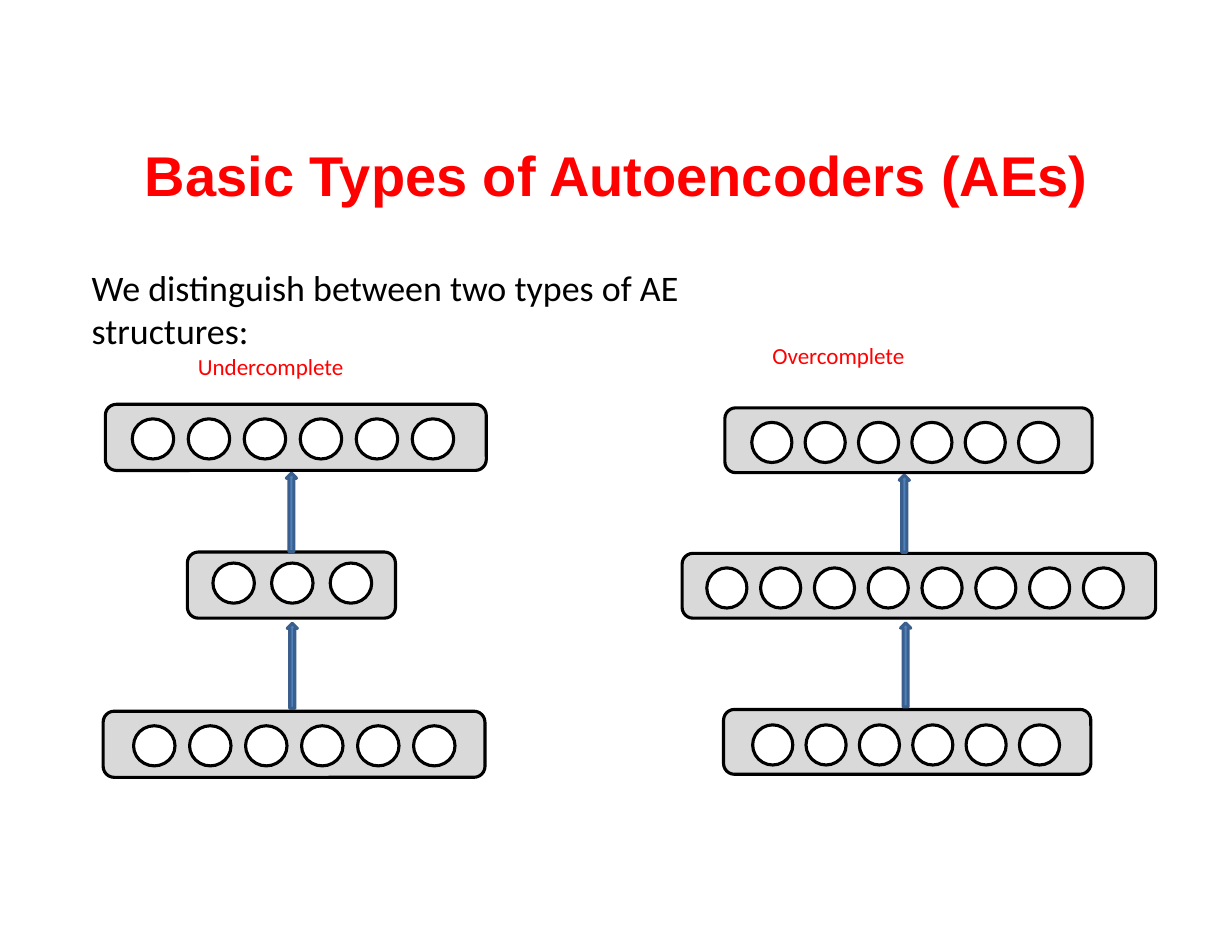
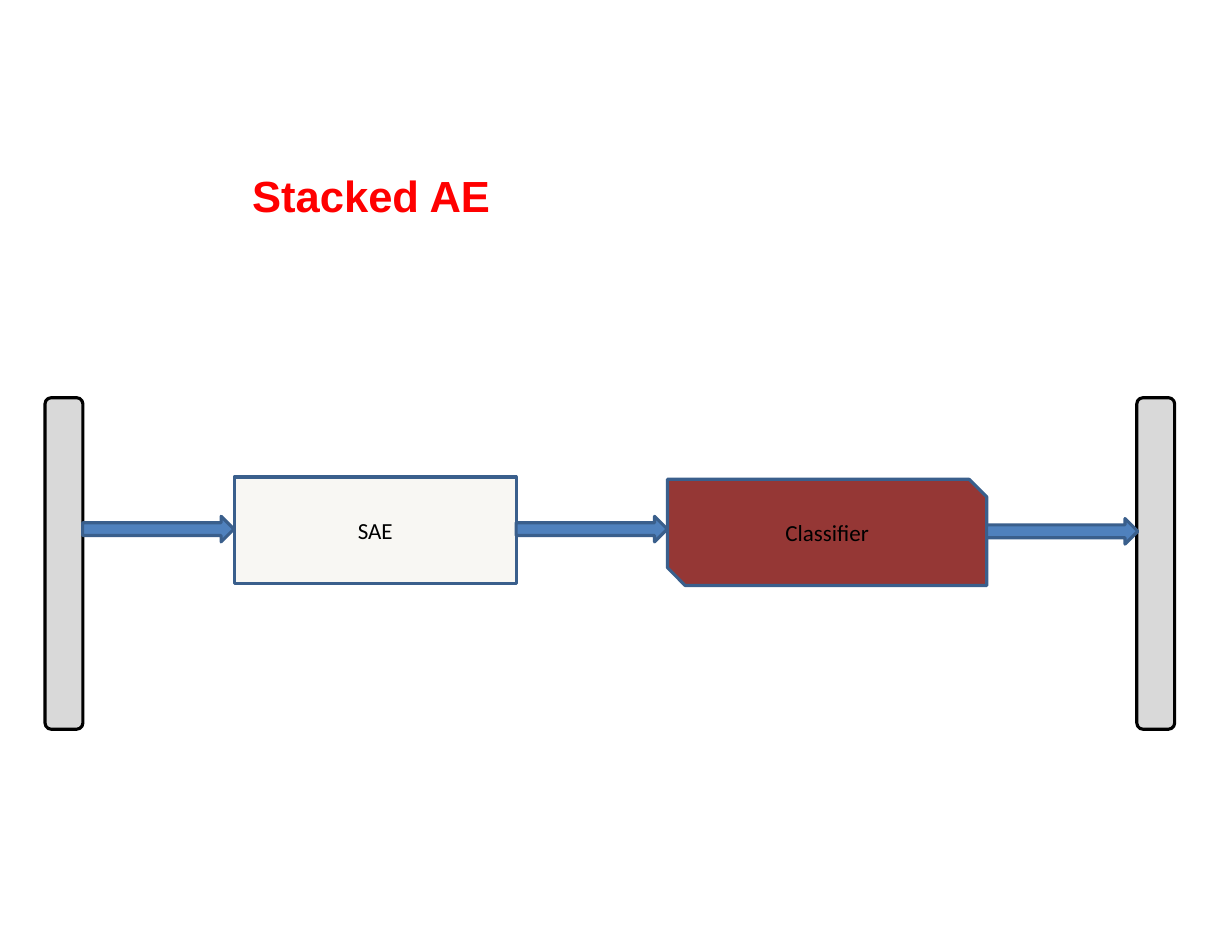
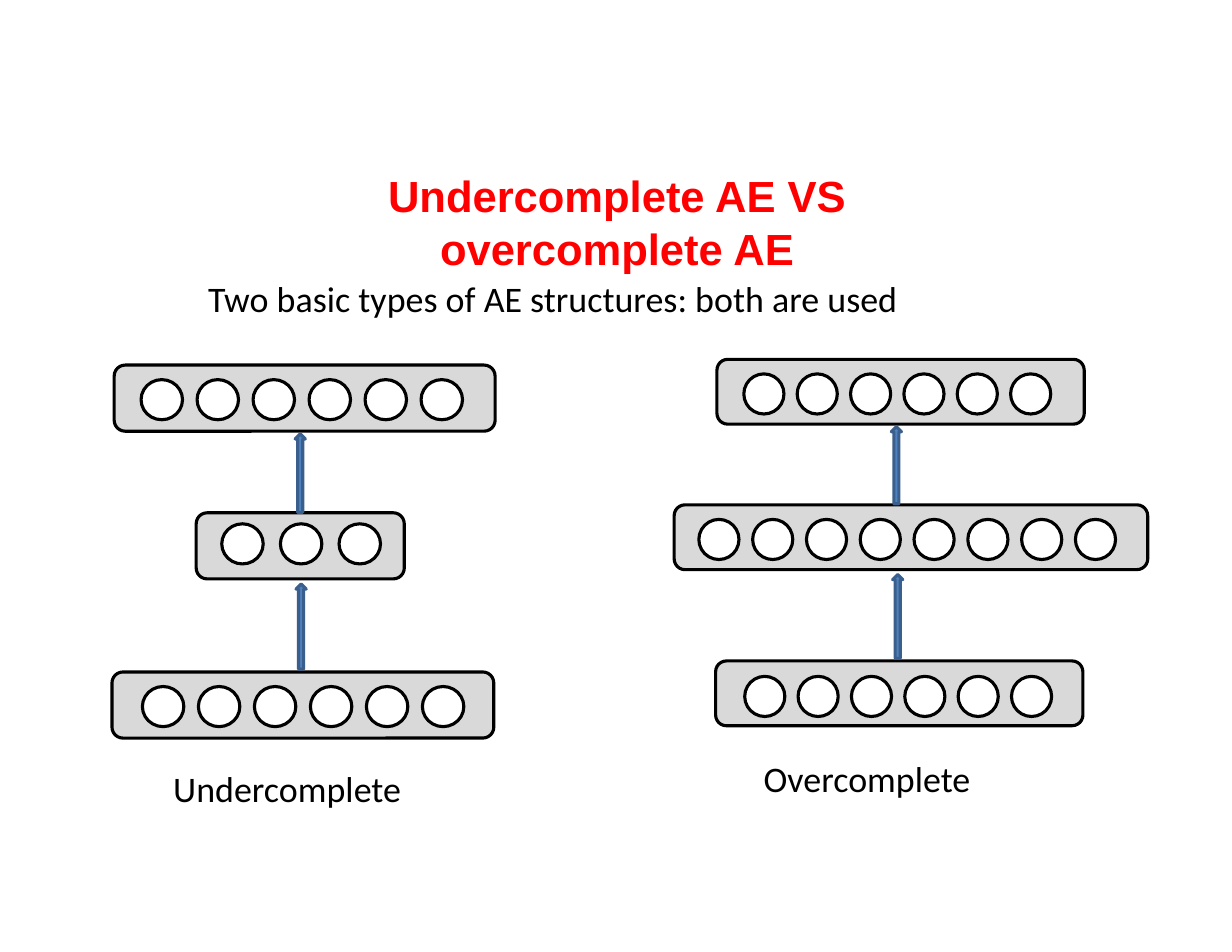
from pptx import Presentation
from pptx.dml.color import RGBColor
from pptx.enum.shapes import MSO_SHAPE as Shape
from pptx.enum.text import MSO_ANCHOR as Anchor, MSO_AUTO_SIZE as AutoSize, PP_ALIGN as Align
from pptx.util import Cm, Pt

COLORS = {
    "title": "FF0000",
    "text": "000000",
    "outline": "000000",
    "layer": "D9D9D9",
    "node": "FFFFFF",
    "arrow": "4F81BD",
    "arrow_line": "3A5F8C",
    "encoder": "F8F7F3",
    "classifier": "953735",
}
BODY, LABEL = 23.1, 14.8

# Lengths in cm, measured from the top left corner of each network.
# Layer: left, top, width, node count, first node offset, node pitch, node drop
# Arrow: centre x, centre y, length
UNDERCOMPLETE = {
    "height": 1.5,
    "node": (0.94, 0.91),
    "layers": [
        (0.05, 0, 8.64, 6, 0.61, 1.27, 0.33),
        (0, 6.96, 8.66, 6, 0.69, 1.27, 0.33),
        (1.91, 3.35, 4.72, 3, 0.58, 1.33, 0.25),
    ],
    "arrows": [(4.29, 5.93, 1.93), (4.27, 2.45, 1.78)],
}
OVERCOMPLETE = {
    "height": 1.47,
    "node": (0.91, 0.91),
    "layers": [
        (0.97, 0, 8.33, 6, 0.61, 1.21, 0.33),
        (0.94, 6.84, 8.33, 6, 0.66, 1.21, 0.35),
        (0, 3.3, 10.74, 8, 0.56, 1.22, 0.33),
    ],
    "arrows": [(5.07, 5.83, 1.9), (5.04, 2.4, 1.75)],
}


class SlideBuilder:
    """Holds the shared style and the slide being filled."""

    def __init__(self):
        self.deck = Presentation()
        self.deck.slide_width, self.deck.slide_height = Cm(27.94), Cm(21.59)
        self.page = None

    def set_text(self, frame, words, size, color="text", font="Calibri", bold=False,
                 align=Align.LEFT):
        para = frame.paragraphs[0]
        para.text = words
        para.alignment = align
        para.font.size, para.font.name, para.font.bold = Pt(size), font, bold
        para.font.color.rgb = RGBColor.from_string(COLORS[color])

    def new_page(self, title, left, top, width, height, size, align=Align.CENTER):
        self.page = self.deck.slides.add_slide(self.deck.slide_layouts[5])
        box = self.page.shapes.title
        box.left, box.top, box.width, box.height = Cm(left), Cm(top), Cm(width), Cm(height)
        frame = box.text_frame
        frame.margin_left = frame.margin_top = frame.margin_right = frame.margin_bottom = 0
        frame.vertical_anchor = Anchor.TOP
        frame.auto_size = AutoSize.SHAPE_TO_FIT_TEXT
        self.set_text(frame, title, size, "title", "Arial", True, align)

    def text(self, words, left, top, width, height, size=BODY, color="text", wrap=True):
        box = self.page.shapes.add_textbox(Cm(left), Cm(top), Cm(width), Cm(height))
        box.text_frame.word_wrap = wrap
        box.text_frame.auto_size = AutoSize.SHAPE_TO_FIT_TEXT
        self.set_text(box.text_frame, words, size, color)

    def shape(self, kind, left, top, width, height, fill, line="outline", parent=None):
        shapes = (parent or self.page).shapes
        item = shapes.add_shape(kind, Cm(left), Cm(top), Cm(width), Cm(height))
        item.shadow.inherit = False
        item.fill.solid()
        item.fill.fore_color.rgb = RGBColor.from_string(COLORS[fill])
        item.line.color.rgb = RGBColor.from_string(COLORS[line])
        item.line.width = Pt(2)
        return item

    def block(self, kind, words, left, top, width, height, fill):
        item = self.shape(kind, left, top, width, height, fill, "arrow_line")
        item.text_frame.vertical_anchor = Anchor.MIDDLE
        self.set_text(item.text_frame, words, LABEL, align=Align.CENTER)

    def bar(self, center_x, center_y, length=7.52, thickness=0.86):
        item = self.shape(Shape.ROUNDED_RECTANGLE, center_x - length / 2,
                          center_y - thickness / 2, length, thickness, "layer")
        item.rotation = 90

    def arrow(self, center_x, center_y, length, thickness, angle=0, parent=None):
        item = self.shape(Shape.RIGHT_ARROW, center_x - length / 2, center_y - thickness / 2,
                          length, thickness, "arrow", "arrow_line", parent)
        item.rotation = angle

    def network(self, plan, left, top):
        group = self.page.shapes.add_group_shape()
        node_width, node_height = plan["node"]
        for x, y, width, count, offset, pitch, drop in plan["layers"]:
            self.shape(Shape.ROUNDED_RECTANGLE, left + x, top + y, width, plan["height"],
                       "layer", parent=group)
            for index in range(count):
                self.shape(Shape.OVAL, left + x + offset + index * pitch, top + y + drop,
                           node_width, node_height, "node", parent=group)
        for x, y, length in plan["arrows"]:
            self.arrow(left + x, top + y, length, 0.23, 270, group)


def main():
    builder = SlideBuilder()

    # Basic types
    builder.new_page("Basic Types of Autoencoders (AEs)", 1.93, 3.18, 24.1, 1.55, 36)
    builder.network(UNDERCOMPLETE, 2.34, 9.17)
    builder.network(OVERCOMPLETE, 15.47, 9.25)
    builder.text("We distinguish between two types of AE structures:", 1.83, 5.89, 17.5, 2.24)
    builder.text("Undercomplete", 4.24, 7.87, 3.86, 0.89, LABEL, "title", False)
    builder.text("Overcomplete", 17.27, 7.62, 3.56, 0.89, LABEL, "title", False)

    # Stacked autoencoder pipeline
    builder.new_page("Stacked AE", 5.72, 3.84, 16.54, 1.19, 28, Align.LEFT)
    builder.bar(1.45, 12.78)
    builder.block(Shape.RECTANGLE, "SAE", 5.31, 10.82, 6.4, 2.41, "encoder")
    builder.block(Shape.SNIP_2_DIAG_RECTANGLE, "Classifier", 15.14, 10.87, 7.24, 2.41, "classifier")
    builder.bar(26.21, 12.78)
    for center_x, center_y in ((3.59, 12), (13.42, 12), (24.09, 12.05)):
        builder.arrow(center_x, center_y, 3.43, 0.58)

    # Undercomplete against overcomplete
    builder.new_page("Undercomplete AE VS overcomplete AE", 5.72, 3.84, 16.54, 2.39, 28)
    builder.network(UNDERCOMPLETE, 2.54, 8.28)
    builder.network(OVERCOMPLETE, 15.29, 8.15)
    builder.text("Two basic types of AE structures: both are used", 4.47, 6.15, 17.5, 1.24)
    builder.text("Undercomplete", 3.68, 17.25, 6.15, 1.24)
    builder.text("Overcomplete", 17.07, 17.04, 6.15, 1.24)

    builder.deck.save("out.pptx")


if __name__ == "__main__":
    main()
